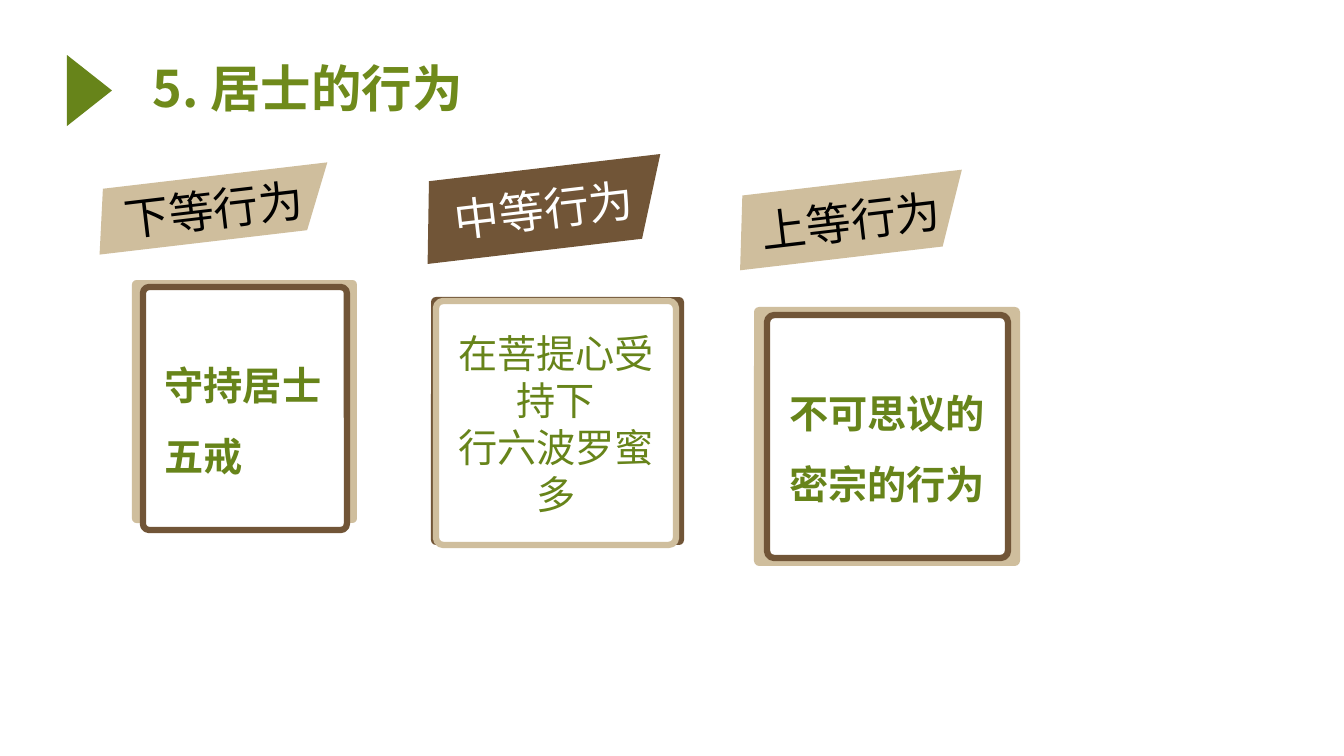
from lxml.etree import SubElement
from pptx import Presentation
from pptx.dml.color import RGBColor
from pptx.enum.shapes import MSO_SHAPE
from pptx.enum.text import MSO_ANCHOR, PP_ALIGN
from pptx.oxml.ns import qn
from pptx.util import Emu, Pt

SCALE = 914400 / 100.8
CJK_FONT = "Noto Sans CJK SC"
COLOURS = {
    "green": "67841A",
    "title": "6F8A1B",
    "tan": "CFBE9D",
    "brown": "715537",
    "white": "FFFFFF",
    "black": "000000",
}
COLUMNS = [
    {"heading": "下等行为", "banner": (95, 176, 237, 65), "fill": "tan", "ink": "black",
     "text": "守持居士五戒", "back": (132, 280, 225, 243), "front": (143, 287, 204, 243),
     "frame": "brown", "centred": False},
    {"heading": "中等行为", "banner": (422, 168, 244, 82), "fill": "brown", "ink": "white",
     "text": "在菩提心受持下\n行六波罗蜜多", "back": (431, 297, 253, 248),
     "front": (436, 301, 240, 244), "frame": "tan", "centred": True},
    {"heading": "上等行为", "banner": (735, 183, 232, 74), "fill": "tan", "ink": "black",
     "text": "不可思议的密宗的行为", "back": (754, 307, 266, 259),
     "front": (767, 315, 241, 243), "frame": "brown", "centred": False},
]


def px(length):
    """Turn pixels into EMU."""
    return Emu(round(length * SCALE))


def colour(name):
    """Look up a colour by its name."""
    return RGBColor.from_string(COLOURS[name])


def paint(shape, fill, line=None):
    """Give a shape a flat fill and an optional thick outline."""
    shape.shadow.inherit = False
    shape.fill.solid()
    shape.fill.fore_color.rgb = colour(fill)
    if line:
        shape.line.color.rgb = colour(line)
        shape.line.width = Pt(4.5)
    else:
        shape.line.fill.background()


def write(shape, text, size, ink, font=CJK_FONT, bold=False, align=PP_ALIGN.LEFT,
          spacing=1.0, margins=(0, 0)):
    """Set and format the text of a shape, with margins as (side, top and bottom)."""
    frame = shape.text_frame
    frame.text = text
    frame.word_wrap = True
    frame.vertical_anchor = MSO_ANCHOR.MIDDLE
    frame.margin_left = frame.margin_right = px(margins[0])
    frame.margin_top = frame.margin_bottom = px(margins[1])
    for para in frame.paragraphs:
        para.alignment = align
        para.line_spacing = spacing
        for span in para.runs:
            span.font.size = Pt(size)
            span.font.bold = bold
            span.font.color.rgb = colour(ink)
            span.font.name = font
            SubElement(span.font._element, qn("a:ea"), typeface=CJK_FONT)


def add_heading(page, box):
    """Place the title and the pointer to its left."""
    left, top, width, height = box
    pointer = page.shapes.add_shape(
        MSO_SHAPE.ISOSCELES_TRIANGLE, px(left - 89), px(top + 41), px(71), px(45))
    pointer.rotation = 90
    paint(pointer, "green")
    title = page.shapes.title
    title.left, title.top, title.width, title.height = map(px, box)
    write(title, "5. 居士的行为", 36, "title", bold=True, margins=(10, 5))


def add_banner(page, box, text, fill, ink):
    """Draw a tilted banner with slanted ends and a centred label."""
    left, top, width, height = box
    outline = page.shapes.build_freeform(left + width, top, scale=SCALE)
    outline.add_line_segments([
        (left + width - 28, top + height),
        (left, top + height),
        (left + 11, top),
    ], close=True)
    banner = outline.convert_to_shape()
    banner.rotation = -6.7
    paint(banner, fill)
    write(banner, text, 32, ink, font="Arial", align=PP_ALIGN.CENTER)


def add_card(page, back_box, front_box, text, fill, frame, centred):
    """Draw a framed white card over a coloured backing."""
    back = page.shapes.add_shape(MSO_SHAPE.ROUNDED_RECTANGLE, *map(px, back_box))
    back.adjustments[0] = 0.02
    paint(back, fill)
    front = page.shapes.add_shape(MSO_SHAPE.ROUNDED_RECTANGLE, *map(px, front_box))
    front.adjustments[0] = 0.03
    paint(front, "white", frame)
    write(front, text, 28, "green", bold=not centred,
          align=PP_ALIGN.CENTER if centred else PP_ALIGN.LEFT,
          spacing=1.0 if centred else 1.5, margins=(20, 10))


def main():
    """Build the slide and save it."""
    deck = Presentation()
    deck.slide_width, deck.slide_height = px(1344), px(756)
    page = deck.slides.add_slide(deck.slide_layouts[5])
    add_heading(page, (143, 27, 1021, 121))
    for column in COLUMNS:
        add_card(page, column["back"], column["front"], column["text"],
                 column["fill"], column["frame"], column["centred"])
        add_banner(page, column["banner"], column["heading"], column["fill"], column["ink"])
    deck.save("out.pptx")


if __name__ == "__main__":
    main()
